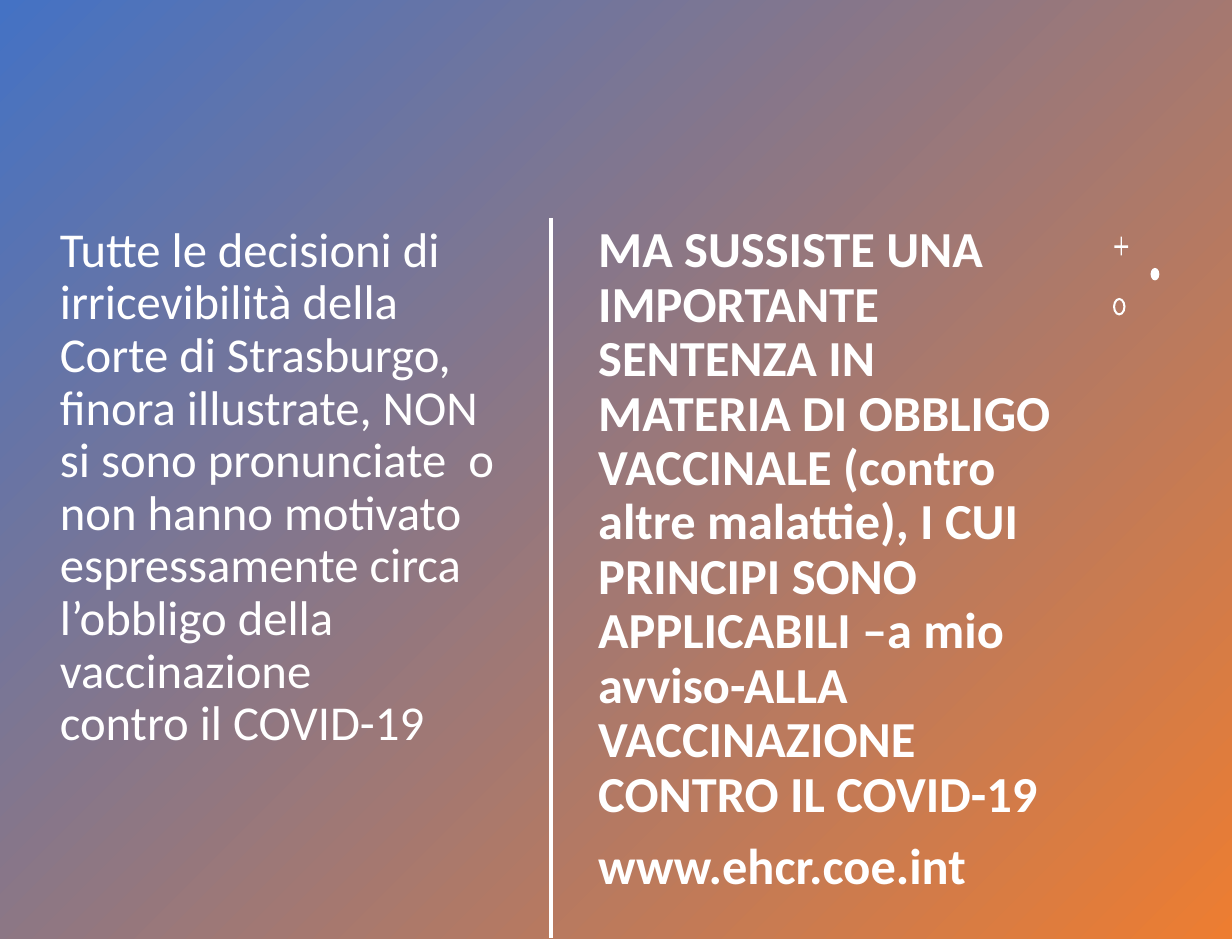
from dataclasses import dataclass

from lxml import etree
from pptx import Presentation
from pptx.dml.color import RGBColor
from pptx.enum.shapes import MSO_CONNECTOR, MSO_SHAPE
from pptx.enum.text import MSO_ANCHOR
from pptx.oxml.ns import qn
from pptx.util import Pt

EMU_PER_PX = 9144
WIDTH, HEIGHT = 984, 750
BLANK_LAYOUT = 6
RECTANGLE, OVAL, DONUT = MSO_SHAPE.RECTANGLE, MSO_SHAPE.OVAL, MSO_SHAPE.DONUT
STRAIGHT = MSO_CONNECTOR.STRAIGHT
TOP = MSO_ANCHOR.TOP


@dataclass(frozen=True)
class Theme:
    white: RGBColor = RGBColor(0xFF, 0xFF, 0xFF)
    blue: RGBColor = RGBColor(0x44, 0x72, 0xC4)
    orange: RGBColor = RGBColor(0xED, 0x7D, 0x31)
    font: str = "Calibri"
    decisions_size: int = 28
    ruling_size: int = 29
    divider_width: int = 2


THEME = Theme()

DECISIONS = [
    "Tutte le decisioni di irricevibilità della Corte di Strasburgo, finora "
    "illustrate, NON si sono pronunciate  o non hanno motivato espressamente "
    "circa l’obbligo della vaccinazione\ncontro il COVID-19",
]
RULING = [
    "MA SUSSISTE UNA IMPORTANTE SENTENZA IN MATERIA DI OBBLIGO VACCINALE "
    "(contro altre malattie), I CUI PRINCIPI SONO APPLICABILI –a mio "
    "avviso-ALLA VACCINAZIONE CONTRO IL COVID-19",
    "www.ehcr.coe.int",
]


def px(*lengths):
    return [length * EMU_PER_PX for length in lengths]


def add_preset(page, kind, left, top, width, height):
    shape = page.shapes.add_shape(kind, *px(left, top, width, height))
    shape.shadow.inherit = False
    shape.line.fill.background()
    return shape


def fill_solid(shape):
    shape.fill.solid()
    shape.fill.fore_color.rgb = THEME.white


def add_background(page):
    panel = add_preset(page, RECTANGLE, 0, 0, WIDTH, HEIGHT)
    panel.fill.gradient()
    panel.fill.gradient_angle = 315
    for stop, color in zip(panel.fill.gradient_stops, (THEME.blue, THEME.orange)):
        stop.color.rgb = color


def add_text(page, paragraphs, left, top, width, height, *, size, bold=False, gap=0):
    box = page.shapes.add_textbox(*px(left, top, width, height))
    frame = box.text_frame
    frame.word_wrap = True
    frame.vertical_anchor = TOP
    for index, text in enumerate(paragraphs):
        para = frame.add_paragraph() if index else frame.paragraphs[0]
        para.text = text
        para.line_spacing = 0.9
        para.space_before = Pt(gap if index else 0)
        for span in para.runs:
            span.font.name = THEME.font
            span.font.size = Pt(size)
            span.font.bold = bold
            span.font.color.rgb = THEME.white


def add_divider(page, x, top, bottom):
    divider = page.shapes.add_connector(STRAIGHT, *px(x, top, x, bottom))
    divider.line.color.rgb = THEME.white
    divider.line.width = Pt(THEME.divider_width)
    etree.SubElement(divider._element.spPr, qn("a:effectLst"))


def add_plus(page, xs, ys):
    left, arm_left, arm_right, right = xs
    top, arm_top, arm_bottom, bottom = ys
    outline = [
        (arm_right, top), (arm_right, arm_top), (right, arm_top),
        (right, arm_bottom), (arm_right, arm_bottom), (arm_right, bottom),
        (arm_left, bottom), (arm_left, arm_bottom), (left, arm_bottom),
        (left, arm_top), (arm_left, arm_top),
    ]
    builder = page.shapes.build_freeform(arm_left, top, scale=EMU_PER_PX)
    builder.add_line_segments(outline, close=True)
    plus = builder.convert_to_shape()
    plus.shadow.inherit = False
    plus.line.fill.background()
    fill_solid(plus)


def add_ornaments(page):
    add_plus(page, (890, 895, 896, 901), (189, 196, 198, 204))
    dot = add_preset(page, OVAL, 919, 214, 7, 10)
    ring = add_preset(page, DONUT, 889, 238, 10, 14)
    ring.adjustments[0] = 0.17
    for shape in (dot, ring):
        fill_solid(shape)


def main():
    deck = Presentation()
    deck.slide_width, deck.slide_height = px(WIDTH, HEIGHT)
    page = deck.slides.add_slide(deck.slide_layouts[BLANK_LAYOUT])
    add_background(page)
    add_text(page, DECISIONS, 38, 175, 368, 551, size=THEME.decisions_size)
    add_text(page, RULING, 468, 174, 404, 548,
             size=THEME.ruling_size, bold=True, gap=10)
    add_divider(page, 440, 174, 749)
    add_ornaments(page)
    deck.save("out.pptx")


if __name__ == "__main__":
    main()
